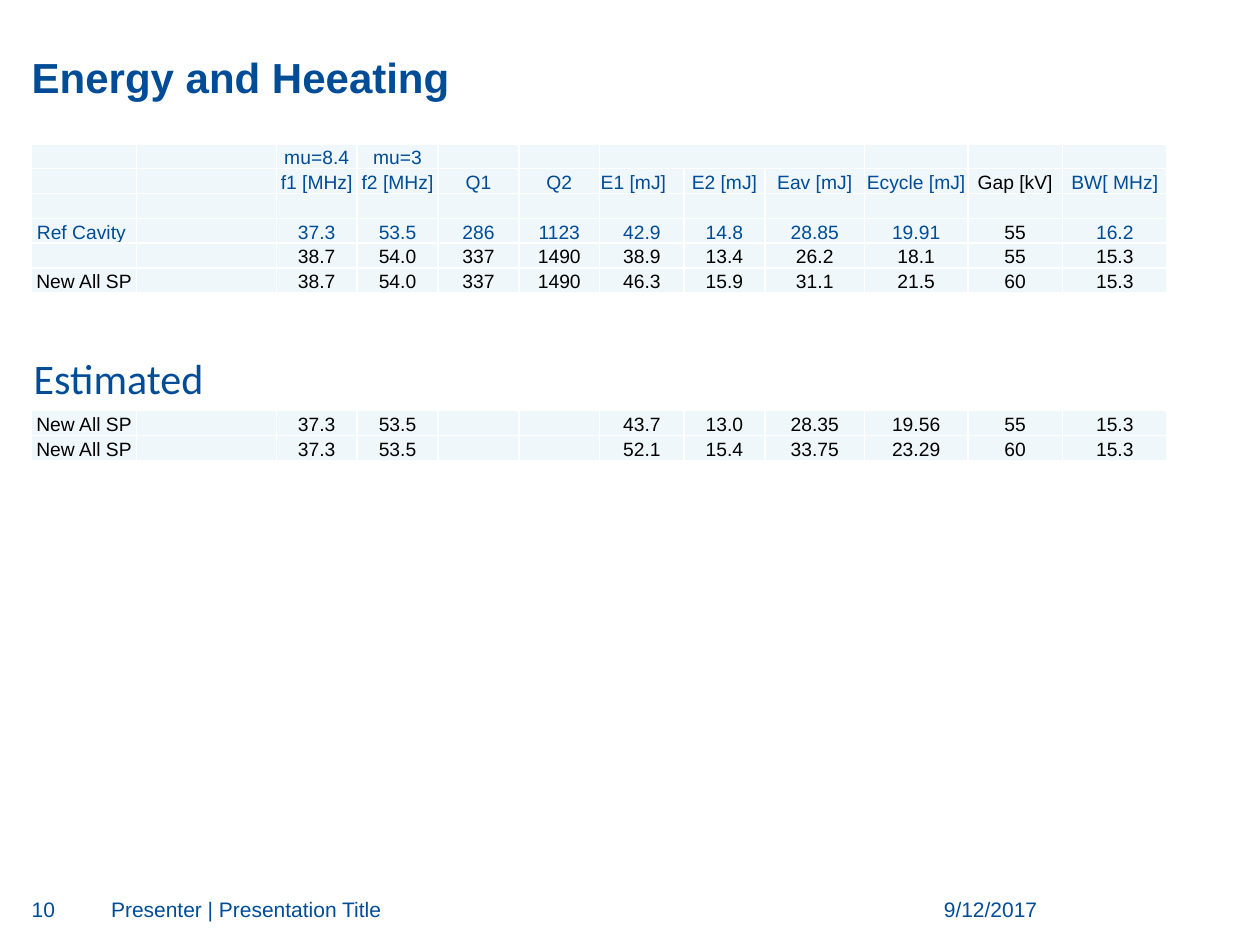
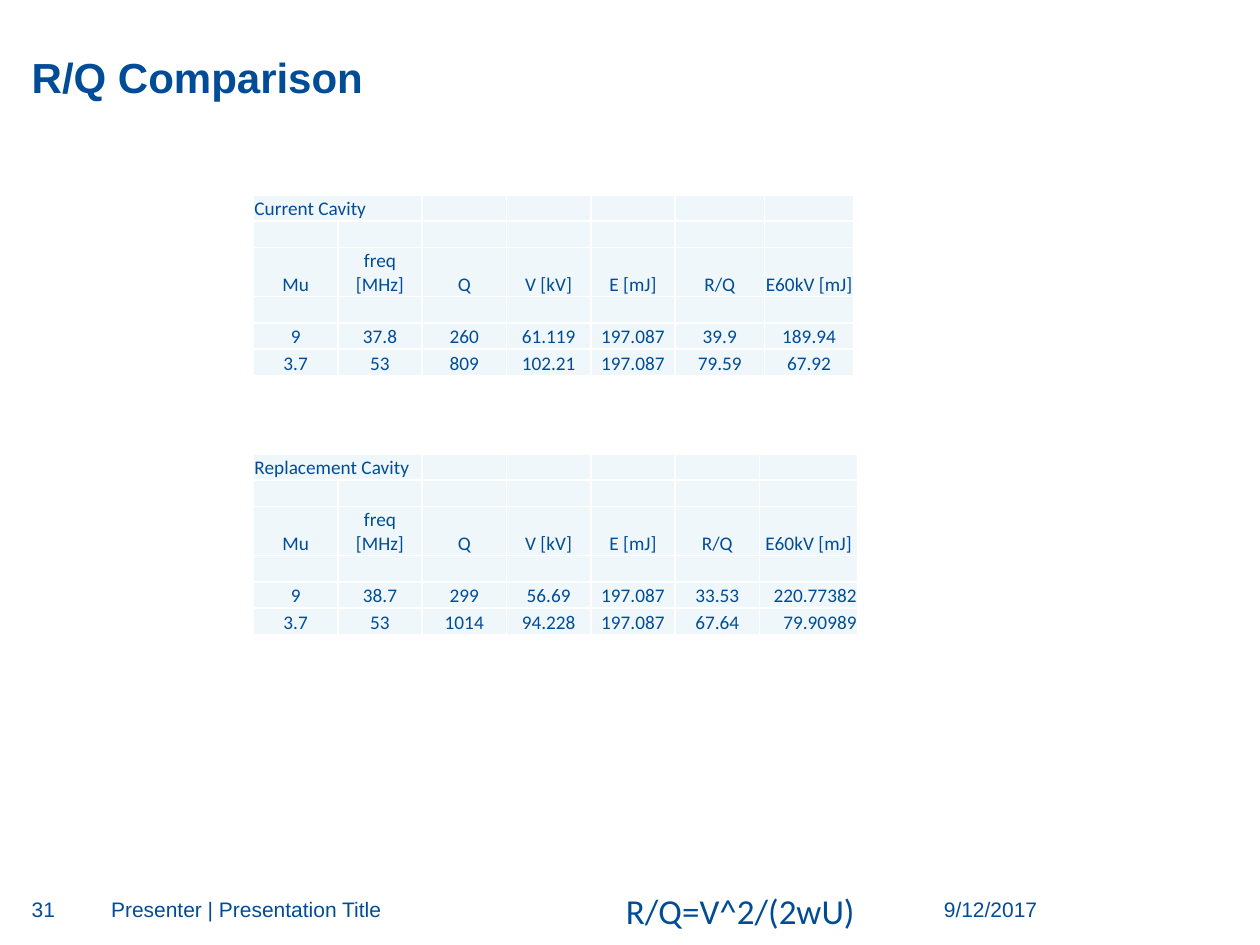
from lxml.etree import SubElement
from pptx import Presentation
from pptx.dml.color import RGBColor as RGB
from pptx.enum.text import MSO_ANCHOR as ANCHOR, MSO_AUTO_SIZE as AUTO, PP_ALIGN as ALIGN
from pptx.oxml.ns import qn
from pptx.util import Cm, Pt

COLORS = {"blue": "004C97", "pale": "EFF7FB", "black": "000000", "white": "FFFFFF"}
LEFT, CENTER, RIGHT = ALIGN.LEFT, ALIGN.CENTER, ALIGN.RIGHT
EDGE = 0.64  # left margin of the slides
GAP = 0.02  # cell margin

ENERGY_COLS = [2.11, 2.82] + [1.63] * 4 + [1.7, 1.63, 2.01, 2.08, 1.91, 2.11]
ENERGY = [
    ["", "", "mu=8.4", "mu=3"],
    ["", "", "f1 [MHz]", "f2 [MHz]", "Q1", "Q2", "E1 [mJ]", "E2 [mJ]",
     "Eav [mJ]", "Ecycle [mJ]", "Gap [kV]", "BW[ MHz]"],
    [],
    ["Ref Cavity ", "", "37.3", "53.5", "286", "1123", "42.9", "14.8",
     "28.85", "19.91", "55", "16.2"],
    ["", "", "38.7", "54.0", "337", "1490", "38.9", "13.4",
     "26.2", "18.1", "55", "15.3"],
    ["New All SP", "", "38.7", "54.0", "337", "1490", "46.3", "15.9",
     "31.1", "21.5", "60", "15.3"],
]
ESTIMATE = [
    ["New All SP", "", "37.3", "53.5", "", "", "43.7", "13.0",
     "28.35", "19.56", "55", "15.3"],
    ["New All SP", "", "37.3", "53.5", "", "", "52.1", "15.4",
     "33.75", "23.29", "60", "15.3"],
]
RATIO_HEAD = ["Mu", "freq [MHz]", "Q", "V [kV]", "E [mJ]", "R/Q", "E60kV [mJ]"]
CURRENT = [
    ["9", "37.8", "260", "61.119", "197.087", "39.9", "189.94"],
    ["3.7", "53", "809", "102.21", "197.087", "79.59", "67.92"],
]
REPLACED = [
    ["9", "38.7", "299", "56.69", "197.087", "33.53", "220.77382"],
    ["3.7", "53", "1014", "94.228", "197.087", "67.64", "79.90989"],
]


def color(name):
    return RGB.from_string(COLORS[name])


def write(frame, text, size=12, font="Arial", ink="blue", bold=False, align=LEFT):
    para = frame.paragraphs[0]
    para.alignment = align
    if not text:  # keeps an empty cell as low as a filled one
        SubElement(para._p, qn("a:endParaRPr"), sz=str(size * 100))
        return
    run = para.add_run()
    run.text = text
    run.font.size, run.font.name, run.font.bold = Pt(size), font, bold
    run.font.color.rgb = color(ink)


class Deck:
    def __init__(self):
        self.file = Presentation()
        self.file.slide_width, self.file.slide_height = Cm(25.4), Cm(19.05)
        self.slide = None

    def page(self, title, number):
        """Start a slide with its title and footer."""
        self.slide = self.file.slides.add_slide(self.file.slide_layouts[6])
        self.box(title, EDGE, 0.28, 24.13, 1.78, anchor=ANCHOR.BOTTOM, size=24, bold=True)
        foot = [(number, EDGE, 1.24, LEFT),
                ("Presenter | Presentation Title", 2.24, 14.94, LEFT),
                ("9/12/2017", 17.91, 3, RIGHT)]
        for text, left, width, align in foot:
            self.box(text, left, 18.08, width, 0.66, align=align)

    def frame(self, left, top, width, height):
        box = self.slide.shapes.add_textbox(Cm(left), Cm(top), Cm(width), Cm(height))
        return box.text_frame

    def box(self, text, *place, anchor=ANCHOR.TOP, **form):
        frame = self.frame(*place)
        frame.word_wrap = True
        frame.vertical_anchor = anchor
        frame.margin_left = frame.margin_right = 0
        frame.margin_top = frame.margin_bottom = 0
        write(frame, text, **form)

    def label(self, text, *place, size):
        """Add free text in a box that grows with it."""
        frame = self.frame(*place)
        frame.word_wrap = False
        frame.auto_size = AUTO.SHAPE_TO_FIT_TEXT
        write(frame, text, size=size, font="Calibri")

    def table(self, rows, left, top, cols, heights, form, merge=None):
        """Draw a table; form(row, col) gives the text format of a cell."""
        grid = self.slide.shapes.add_table(
            len(rows), len(cols), Cm(left), Cm(top),
            Cm(sum(cols)), Cm(sum(heights))).table
        grid.first_row = grid.horz_banding = False
        for col, width in zip(grid.columns, cols):
            col.width = Cm(width)
        for line, height in zip(grid.rows, heights):
            line.height = Cm(height)
        for r, row in enumerate(rows):
            for c in range(len(cols)):
                text = row[c] if c < len(row) else ""
                self.cell(grid.cell(r, c), text, **form(r, c))
        if merge:
            first, last = merge
            grid.cell(0, first).merge(grid.cell(0, last))

    def cell(self, cell, text, **form):
        cell.margin_left = cell.margin_right = cell.margin_top = Cm(GAP)
        cell.margin_bottom = 0
        cell.vertical_anchor = ANCHOR.BOTTOM
        for side in "LRTB":
            edge = SubElement(cell._tc.get_or_add_tcPr(), qn("a:ln" + side), w=str(Pt(1)))
            fill = SubElement(edge, qn("a:solidFill"))
            SubElement(fill, qn("a:srgbClr"), val=COLORS["white"])
        cell.fill.solid()
        cell.fill.fore_color.rgb = color("pale")
        write(cell.text_frame, text, size=11, **form)

    def ratio(self, name, data, top, cols, last=CENTER):
        """Draw one cavity's table; last aligns the values of the last column."""
        def form(r, c):
            align = LEFT if r == 0 else CENTER
            if r > 3 and c == len(cols) - 1:
                align = last
            return {"font": "Calibri", "align": align}

        rows = [[name], [], RATIO_HEAD, [], *data]
        heights = [0.53, 0.53, 0.99] + [0.53] * 3
        self.table(rows, 5.11, top, cols, heights, form, merge=(0, 1))


def energy_form(r, c):
    ink = "black" if r > 3 or c == 10 else "blue"
    return {"ink": ink, "align": LEFT if (r, c) == (1, 6) else CENTER}


def guess_form(r, c):
    return {"ink": "black", "align": CENTER}


def main():
    deck = Deck()

    deck.page("Energy and Heeating", "10")
    deck.table(ENERGY, EDGE, 2.9, ENERGY_COLS, [0.5] * 6, energy_form, merge=(6, 8))
    deck.table(ESTIMATE, EDGE, 8.28, ENERGY_COLS, [0.5] * 2, guess_form)
    deck.label("Estimated", 0.43, 6.99, 3.96, 1.27, size=24)

    deck.page("R/Q Comparison", "31")
    deck.ratio("Current Cavity", CURRENT, 3.93, [1.7] * 5 + [1.8] * 2)
    deck.ratio("Replacement Cavity", REPLACED, 9.15, [1.7] * 6 + [1.98], last=RIGHT)
    deck.label("R/Q=V^2/(2wU)", 12.37, 17.81, 5.18, 1.12, size=20)

    deck.file.save("out.pptx")


if __name__ == "__main__":
    main()
